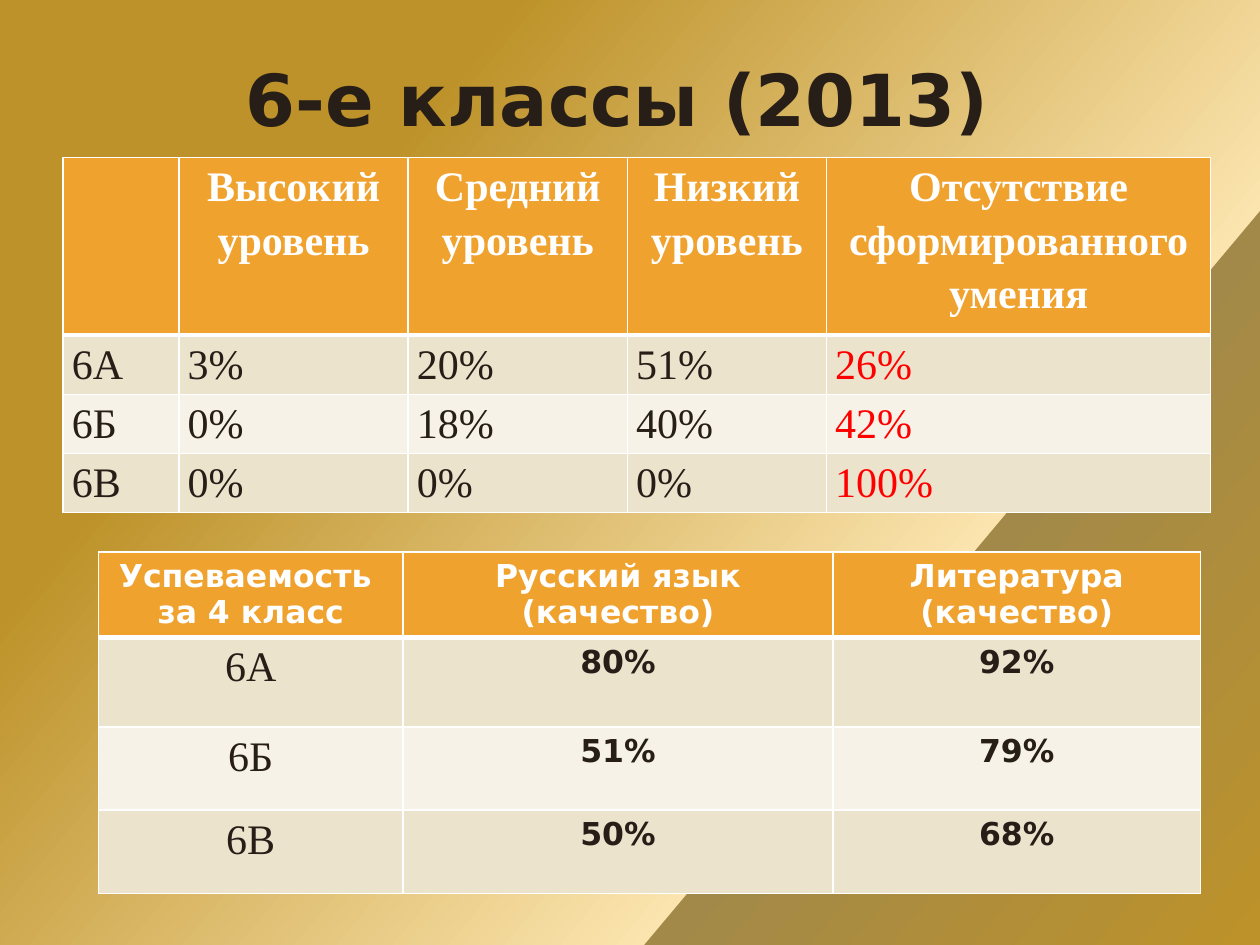
from copy import deepcopy
from lxml import etree
from pptx import Presentation
from pptx.dml.color import RGBColor
from pptx.enum.text import MSO_ANCHOR, PP_ALIGN
from pptx.oxml.ns import qn
from pptx.util import Inches, Pt

CENTER, LEFT, MIDDLE = PP_ALIGN.CENTER, PP_ALIGN.LEFT, MSO_ANCHOR.MIDDLE
SANS, SERIF = "DejaVu Sans", "Times New Roman"
THEME = {
    "ink": "271E18",
    "white": "FFFFFF",
    "red": "FF0000",
    "header": "F0A22E",
    "bands": ("ECE3CD", "F6F2E8"),
    "gradient": [(0, "BD922A"), (0.25, "BD922A"), (0.7, "FBE4AE"), (0.7, "A28949"), (1, "BD922A")],
    "title": {"name": SANS, "size": Pt(41), "bold": True},
    "level_header": {"name": SERIF, "size": Pt(24), "bold": True},
    "level_body": {"name": SERIF, "size": Pt(24), "bold": False},
    "grade": {"name": SANS, "size": Pt(18), "bold": True},
}
MARGINS = {
    "margin_left": Inches(0.07),
    "margin_right": Inches(0.07),
    "margin_top": 0,
    "margin_bottom": 0,
}


def write(frame, text, style, color, align, spacing=None):
    frame.text = text
    for paragraph in frame.paragraphs:
        paragraph.alignment = align
        paragraph.line_spacing = spacing
        for run in paragraph.runs:
            run.font.color.rgb = RGBColor.from_string(color)
            for attribute, value in style.items():
                setattr(run.font, attribute, value)


def paint(cell, color, row):
    cell.fill.solid()
    cell.fill.fore_color.rgb = RGBColor.from_string(color)
    widths = {"lnL": 1, "lnR": 1, "lnT": 3 if row == 1 else 1, "lnB": 3 if row == 0 else 1}
    properties = cell._tc.get_or_add_tcPr()
    for index, (side, width) in enumerate(widths.items()):
        line = etree.Element(qn(f"a:{side}"), w=str(Pt(width)))
        solid = etree.SubElement(line, qn("a:solidFill"))
        etree.SubElement(solid, qn("a:srgbClr"), val=THEME["white"])
        properties.insert(index, line)


prs = Presentation()
prs.slide_width, prs.slide_height = Inches(10), Inches(7.5)
slide = prs.slides.add_slide(prs.slide_layouts[5])

backdrop = slide.background.fill
backdrop.gradient()
backdrop.gradient_angle = 320
stop_list = next(slide.element.iter(qn("a:gsLst")))
for _ in range(len(THEME["gradient"]) - len(stop_list)):
    stop_list.append(deepcopy(stop_list[0]))
for stop, (position, color) in zip(backdrop.gradient_stops, THEME["gradient"]):
    stop.position = position
    stop.color.rgb = RGBColor.from_string(color)

title = slide.shapes.title
title.left, title.top, title.width, title.height = map(Inches, (0.5, 0.3, 9, 0.95))
write(title.text_frame, "6-е классы (2013) ", THEME["title"], THEME["ink"], CENTER)
title.text_frame.vertical_anchor = MIDDLE

tables = [
    {
        "at": (0.5, 1.25, 9.11, 2.82),
        "columns": (0.92, 1.82, 1.74, 1.58, 3.05),
        "rows": (1.41, 0.47, 0.47, 0.47),
        "header": "level_header",
        "body": "level_body",
        "align": LEFT,
        "serif_columns": range(5),
        "red_column": 4,
        "content": [
            ("", "Высокий уровень", "Средний уровень", "Низкий уровень", "Отсутствие сформированного умения"),
            ("6А", "3%", "20%", "51%", "26%"),
            ("6Б", "0%", "18%", "40%", "42%"),
            ("6В", "0%", "0%", "0%", "100%"),
        ],
    },
    {
        "at": (0.78, 4.38, 8.75, 2.69),
        "columns": (2.42, 3.41, 2.92),
        "rows": (0.66, 0.71, 0.66, 0.66),
        "header": "grade",
        "body": "grade",
        "align": CENTER,
        "serif_columns": range(1),
        "red_column": None,
        "content": [
            ("Успеваемость \nза 4 класс", "Русский язык\n(качество)", "Литература (качество)"),
            ("6А", "80%", "92%"),
            ("6Б", "51%", "79%"),
            ("6В", "50%", "68%"),
        ],
    },
]

for data in tables:
    grid = slide.shapes.add_table(len(data["rows"]), len(data["columns"]), *map(Inches, data["at"])).table
    for column, width in zip(grid.columns, data["columns"]):
        column.width = Inches(width)
    for row, height in zip(grid.rows, data["rows"]):
        row.height = Inches(height)
    for r, values in enumerate(data["content"]):
        for c, value in enumerate(values):
            cell = grid.cell(r, c)
            if r == 0:
                style, color, align = data["header"], THEME["white"], CENTER
            else:
                style = "level_body" if c in data["serif_columns"] else data["body"]
                color = THEME["red"] if c == data["red_column"] else THEME["ink"]
                align = data["align"]
            serif = THEME[style]["name"] == SERIF
            if serif:
                for attribute, margin in MARGINS.items():
                    setattr(cell, attribute, margin)
            write(cell.text_frame, value, THEME[style], color, align, 1.15 if serif else None)
            paint(cell, THEME["header"] if r == 0 else THEME["bands"][(r - 1) % 2], r)

prs.save("out.pptx")
